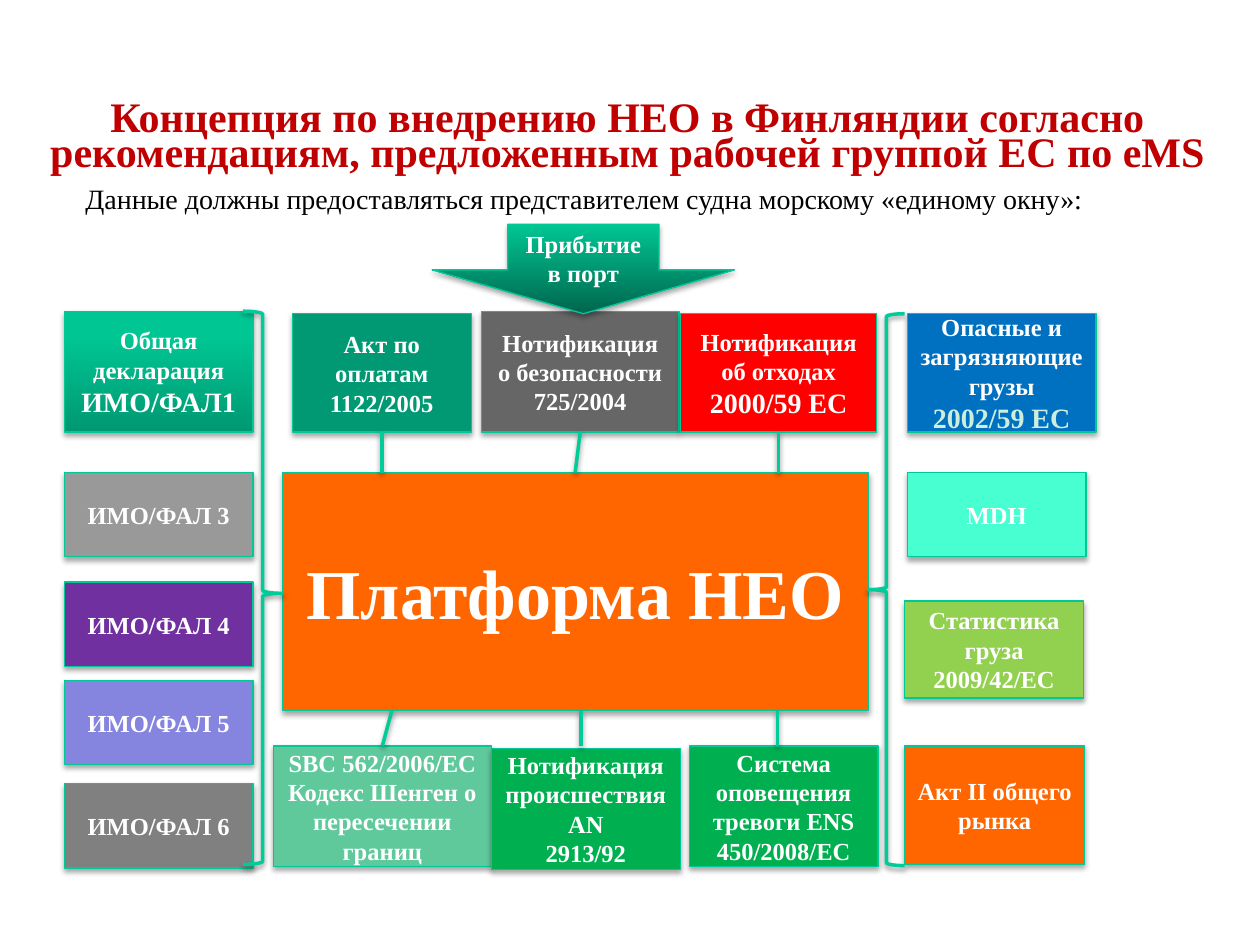
from lxml import etree
from pptx import Presentation
from pptx.dml.color import RGBColor
from pptx.enum.shapes import MSO_CONNECTOR, MSO_SHAPE
from pptx.enum.text import MSO_ANCHOR, PP_ALIGN
from pptx.oxml.ns import qn
from pptx.util import Inches, Pt

RECTANGLE, ARROW = MSO_SHAPE.RECTANGLE, MSO_SHAPE.DOWN_ARROW
LEFT_BRACE, RIGHT_BRACE = MSO_SHAPE.LEFT_BRACE, MSO_SHAPE.RIGHT_BRACE
STRAIGHT = MSO_CONNECTOR.STRAIGHT
CENTER, LEFT = PP_ALIGN.CENTER, PP_ALIGN.LEFT
MIDDLE, TOP = MSO_ANCHOR.MIDDLE, MSO_ANCHOR.TOP
TOP_SIDE, BOTTOM_SIDE = 0, 2

BLACK = RGBColor(0x00, 0x00, 0x00)
WHITE = RGBColor(0xFF, 0xFF, 0xFF)
DARK_RED = RGBColor(0xC0, 0x00, 0x00)
RED = RGBColor(0xFF, 0x00, 0x00)
ORANGE = RGBColor(0xFF, 0x66, 0x00)
BLUE = RGBColor(0x00, 0x70, 0xC0)
PURPLE = RGBColor(0x70, 0x30, 0xA0)
LAVENDER = RGBColor(0x85, 0x85, 0xE0)
DARK_GRAY = RGBColor(0x66, 0x66, 0x66)
GRAY = RGBColor(0x80, 0x80, 0x80)
LIGHT_GRAY = RGBColor(0x99, 0x99, 0x99)
GREEN = RGBColor(0x00, 0xB0, 0x50)
LIME = RGBColor(0x92, 0xD0, 0x50)
MINT = RGBColor(0x60, 0xC9, 0x9C)
PALE_MINT = RGBColor(0xCC, 0xEE, 0xDF)
AQUA = RGBColor(0x47, 0xFF, 0xD1)
SEA_GREEN = RGBColor(0x00, 0x99, 0x73)
TEAL = RGBColor(0x00, 0x98, 0x72)
DEEP_TEAL = RGBColor(0x00, 0x66, 0x4D)
BRIGHT_TEAL = RGBColor(0x00, 0xC6, 0x94)
BORDER = RGBColor(0x00, 0xC8, 0x96)
LINK = RGBColor(0x00, 0xCC, 0x99)


def write_text(frame, *lines, size=14, color=WHITE, bold=True, align=CENTER,
               anchor=MIDDLE, spacing=None, font="Times New Roman"):
    """Write one paragraph per line; a line may be (text, own format)."""
    frame.word_wrap = True
    frame.vertical_anchor = anchor
    for index, line in enumerate(lines):
        text, own = (line, {}) if isinstance(line, str) else line
        paragraph = frame.paragraphs[0] if index == 0 else frame.add_paragraph()
        paragraph.alignment = align
        if spacing:
            paragraph.line_spacing = Pt(spacing)
        run = paragraph.add_run()
        run.text = text
        run.font.name = font
        run.font.size = Pt(own.get("size", size))
        run.font.bold = bold
        run.font.color.rgb = own.get("color", color)


class Diagram:
    def __init__(self, slide):
        self.slide = slide

    def text(self, left, top, width, height, *lines, **style):
        box = self.slide.shapes.add_textbox(*map(Inches, (left, top, width, height)))
        write_text(box.text_frame, *lines, **style)

    def shadow(self, shape, opacity, distance):
        properties = shape._element.spPr
        for old in properties.findall(qn("a:effectLst")):
            properties.remove(old)
        effects = etree.SubElement(properties, qn("a:effectLst"))
        outer = etree.SubElement(effects, qn("a:outerShdw"), blurRad=str(Pt(3.1)),
                                 dist=str(Pt(distance)), dir="5400000", rotWithShape="0")
        shade = etree.SubElement(outer, qn("a:srgbClr"), val=str(BLACK))
        etree.SubElement(shade, qn("a:alpha"), val=str(opacity * 1000))

    def outline(self, shape, color, width):
        shape.line.color.rgb = color
        shape.line.width = Pt(width)

    def shape(self, kind, left, top, width, height, adjustments=()):
        shape = self.slide.shapes.add_shape(kind, *map(Inches, (left, top, width, height)))
        for index, value in enumerate(adjustments):
            shape.adjustments[index] = value
        return shape

    def block(self, left, top, width, height, fill, *lines, kind=RECTANGLE,
              adjustments=(), **style):
        """Fill is one colour, or (bottom colour, top colour, end of the blend)."""
        shape = self.shape(kind, left, top, width, height, adjustments)
        if isinstance(fill, RGBColor):
            shape.fill.solid()
            shape.fill.fore_color.rgb = fill
        else:
            shape.fill.gradient()
            shape.fill.gradient_angle = 90
            first, last = shape.fill.gradient_stops
            first.color.rgb, last.color.rgb, last.position = fill
        self.outline(shape, BORDER, 0.75)
        self.shadow(shape, 35, 1.8)
        write_text(shape.text_frame, *lines, **style)
        return shape

    def brace(self, kind, left, top, width, height, adjustments):
        shape = self.shape(kind, left, top, width, height, adjustments)
        shape.fill.background()
        self.outline(shape, LINK, 2)
        self.shadow(shape, 38, 1.6)

    def link(self, start, end, above=None, below=None):
        """Join the bottom of the block above to the top of the block below."""
        line = self.slide.shapes.add_connector(STRAIGHT, *map(Inches, start + end))
        if above is not None:
            line.begin_connect(above, BOTTOM_SIDE)
        if below is not None:
            line.end_connect(below, TOP_SIDE)
        self.outline(line, LINK, 2)
        self.shadow(line, 38, 1.6)


def main():
    presentation = Presentation()
    presentation.slide_width, presentation.slide_height = Inches(10), Inches(7.5)
    diagram = Diagram(presentation.slides.add_slide(presentation.slide_layouts[6]))

    # Heading
    diagram.text(0, 0.76, 9.96, 0.71,
                 "Концепция по внедрению НЕО в Финляндии согласно "
                 "рекомендациям, предложенным рабочей группой ЕС по eMS",
                 size=24, color=DARK_RED, spacing=20)
    diagram.text(0.58, 1.39, 8.35, 0.4,
                 "Данные должны предоставляться представителем судна "
                 "морскому «единому окну»:",
                 size=16, color=BLACK, bold=False, align=LEFT, anchor=TOP)

    # Top row and arrival arrow
    diagram.block(0.51, 2.47, 1.5, 0.96, (TEAL, BRIGHT_TEAL, 0.8),
                  "Общая декларация", ("ИМО/ФАЛ1", {"size": 16}))
    security = diagram.block(3.82, 2.47, 1.57, 0.96, DARK_GRAY,
                             "Нотификация о безопасности 725/2004")
    waste = diagram.block(5.4, 2.49, 1.56, 0.94, RED,
                          "Нотификация об отходах", ("2000/59 EC", {"size": 16}))
    diagram.block(7.2, 2.49, 1.5, 0.94, BLUE, "Опасные и загрязняющие грузы",
                  ("2002/59 EC", {"size": 16, "color": PALE_MINT}))
    diagram.block(3.43, 1.78, 2.4, 0.71, (DEEP_TEAL, BRIGHT_TEAL, 1),
                  "Прибытие в порт", kind=ARROW, adjustments=(0.5, 0.49))
    payments = diagram.block(2.32, 2.49, 1.42, 0.94, SEA_GREEN,
                             "Акт по оплатам 1122/2005")

    # Platform
    platform = diagram.block(2.24, 3.75, 4.65, 1.89, ORANGE, "Платформа НЕО", size=40)

    # Left column of forms
    forms = ((3, 3.75, LIGHT_GRAY), (4, 4.62, PURPLE), (5, 5.4, LAVENDER), (6, 6.22, GRAY))
    for number, top, fill in forms:
        diagram.block(0.51, top, 1.5, 0.67, fill, f"ИМО/ФАЛ {number}")

    # Right column and bottom row
    diagram.block(7.2, 3.75, 1.42, 0.67, AQUA, "MDH")
    diagram.block(5.47, 5.92, 1.5, 0.96, GREEN,
                  "Система оповещения тревоги ENS", "450/2008/EC")
    borders = diagram.block(2.17, 5.92, 1.73, 0.96, MINT,
                            "SBC 562/2006/EC Кодекс Шенген о пересечении границ")
    diagram.block(7.18, 5.92, 1.43, 0.94, ORANGE, "Акт II общего рынка")
    diagram.block(3.9, 5.94, 1.5, 0.96, GREEN, "Нотификация происшествия AN", "2913/92")
    diagram.block(7.18, 4.77, 1.42, 0.77, LIME, "Статистика груза", "2009/42/EC")

    # Braces gathering the side columns
    diagram.brace(RIGHT_BRACE, 1.93, 2.47, 0.31, 4.39, (0.08, 0.51))
    diagram.brace(LEFT_BRACE, 6.89, 2.49, 0.29, 4.38, (0.08, 0.5))

    # Links to the platform
    diagram.link((3.03, 3.43), (3.03, 3.75), above=payments)
    diagram.link((4.61, 3.43), (4.57, 3.75), above=security, below=platform)
    diagram.link((6.18, 3.43), (6.18, 3.75), above=waste)
    diagram.link((3.11, 5.64), (3.03, 5.92), below=borders)
    for x in (4.61, 6.17):
        diagram.link((x, 5.64), (x, 5.92))

    presentation.save("out.pptx")


if __name__ == "__main__":
    main()
